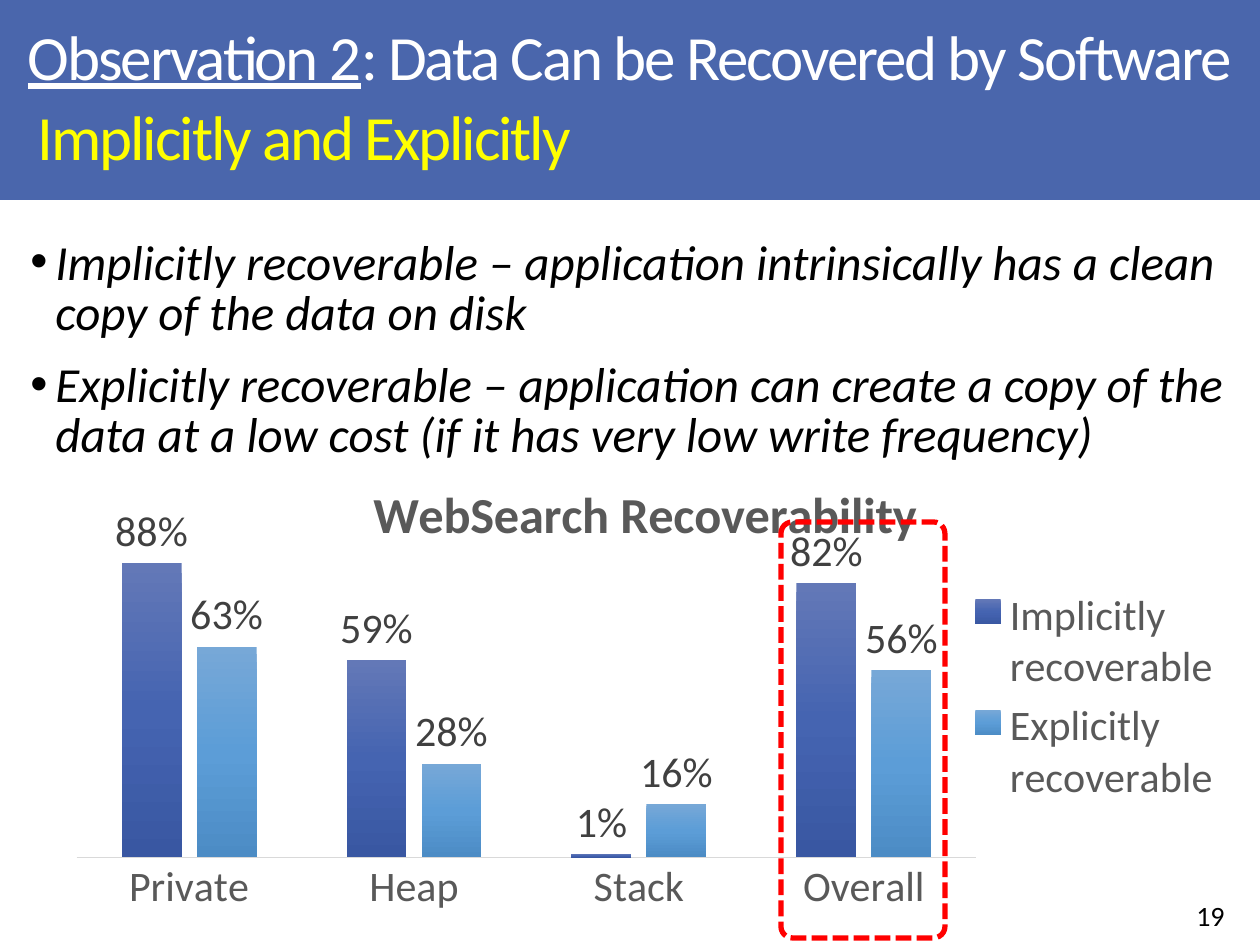
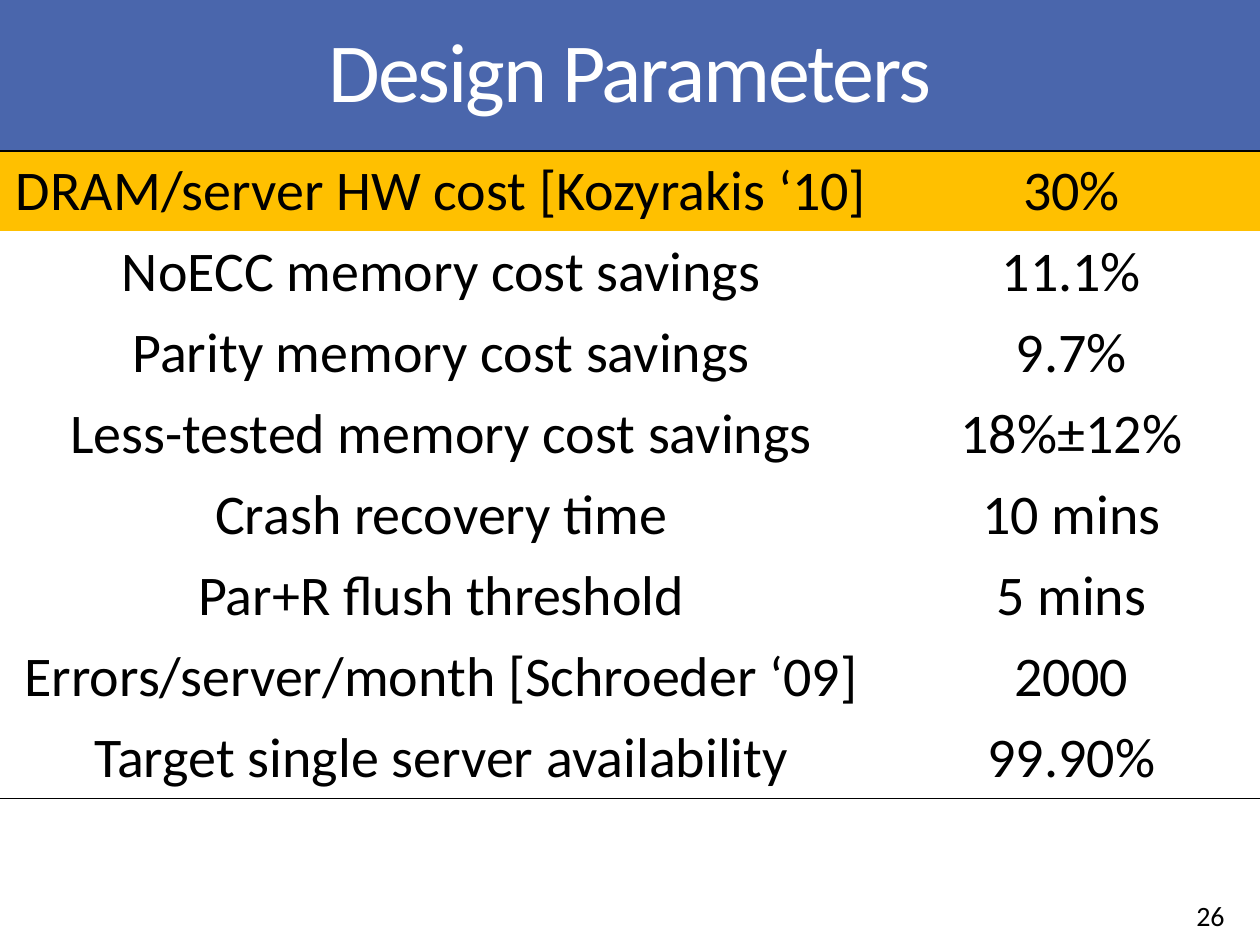
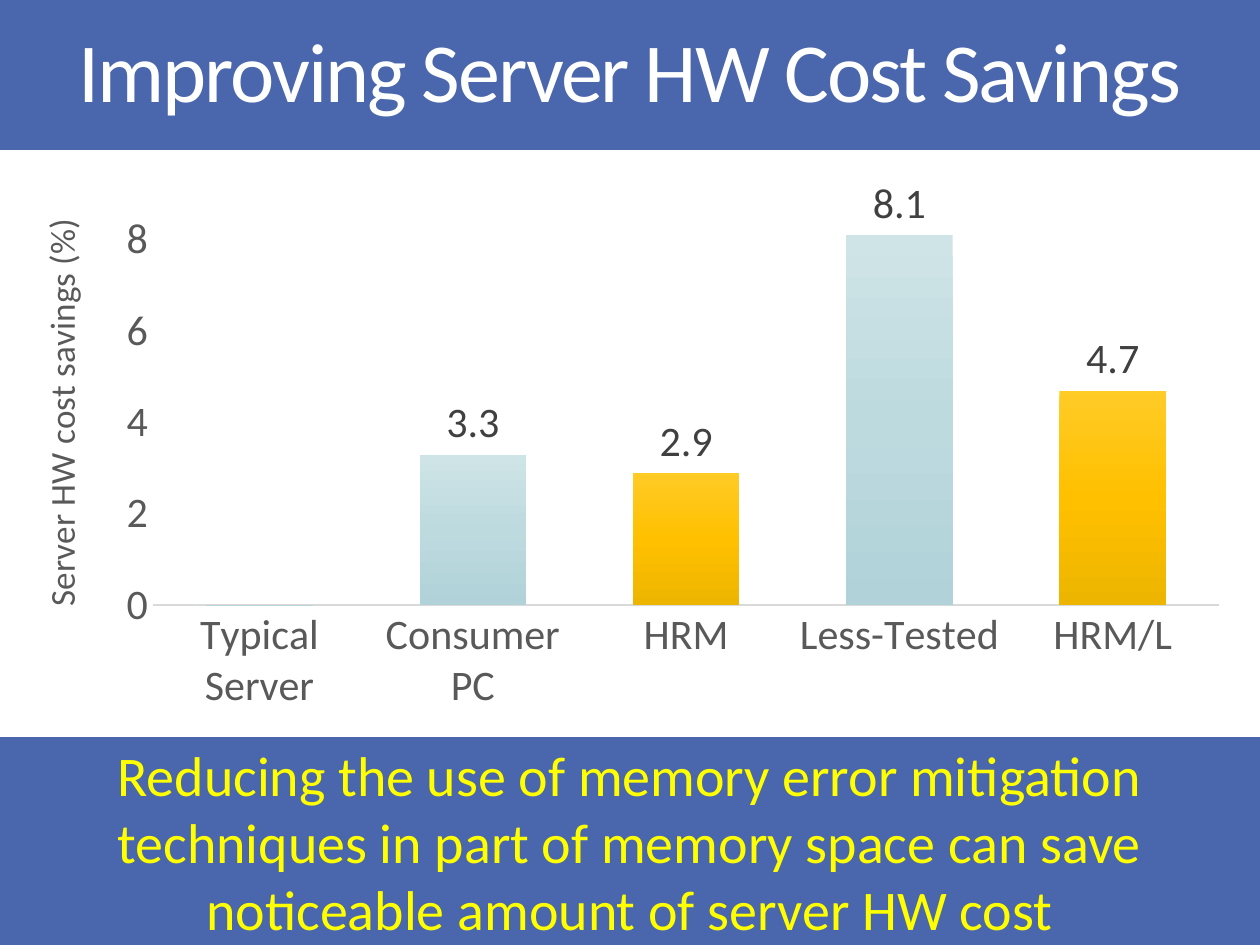
"""Build three slides on data recovery and server hardware cost."""
import lxml.etree
import pptx
import pptx.chart.data
import pptx.dml.color
import pptx.enum.chart
import pptx.enum.dml
import pptx.enum.shapes
import pptx.enum.text
import pptx.oxml.ns
import pptx.util

RGB = pptx.dml.color.RGBColor
SHAPE = pptx.enum.shapes.MSO_SHAPE
ALIGN = pptx.enum.text.PP_ALIGN
ANCHOR = pptx.enum.text.MSO_ANCHOR
CHART = pptx.enum.chart
Pt = pptx.util.Pt
qn = pptx.oxml.ns.qn

BLUE = RGB(0x4A, 0x66, 0xAC)
WHITE = RGB(0xFF, 0xFF, 0xFF)
BLACK = RGB(0, 0, 0)
YELLOW = RGB(0xFF, 0xFF, 0)
AMBER = RGB(0xFF, 0xC0, 0)
RED = RGB(0xFF, 0, 0)
GREY = RGB(0x59, 0x59, 0x59)
DARK = RGB(0x40, 0x40, 0x40)
PALE = RGB(0xD9, 0xD9, 0xD9)
NAVY_FADE = (RGB(0x63, 0x78, 0xB7), RGB(0x45, 0x64, 0xB1), RGB(0x39, 0x57, 0xA2))
SKY_FADE = (RGB(0x77, 0xA8, 0xD7), RGB(0x5C, 0x9D, 0xD7), RGB(0x4C, 0x8C, 0xC5))
TEAL_FADE = (RGB(0xCF, 0xE4, 0xE7), RGB(0xBD, 0xDA, 0xDF), RGB(0xB0, 0xD2, 0xD8))
GOLD_FADE = (RGB(0xFF, 0xCB, 0x25), AMBER, RGB(0xEE, 0xB5, 0))

FONT = "Calibri"
SCALE = 914400 / 126
WIDE, HIGH = 1260, 945
TITLE_HIGH = 150
COLS = (883, 377)
ROW_HIGH = 81
PLAIN = "{2D5ABB26-0587-4C30-8999-92F81FD0307C}"

FACTS = (
    ("DRAM/server HW cost [Kozyrakis ‘10]", "30%"),
    ("NoECC memory cost savings", "11.1%"),
    ("Parity memory cost savings", "9.7%"),
    ("Less-tested memory cost savings", "18%±12%"),
    ("Crash recovery time", "10 mins"),
    ("Par+R flush threshold", "5 mins"),
    ("Errors/server/month [Schroeder ‘09]", "2000"),
    ("Target single server availability", "99.90%"),
)
POINTS = (
    "Implicitly recoverable – application intrinsically has a clean copy of the data on disk",
    "Explicitly recoverable – application can create a copy of the data at a low cost "
    "(if it has very low write frequency)",
)


def px(size):
    return round(size * SCALE)


def area(*box):
    return [px(size) for size in box]


def style(font, size, color, bold=False):
    font.name, font.size, font.bold = FONT, Pt(size), bold
    font.color.rgb = color


def write(para, text, size, color, space=0):
    run = para.add_run()
    run.text = text
    style(run.font, size, color)
    if space:
        run._r.get_or_add_rPr().set("spc", str(space))
    return run


def add_band(slide, top, high, anchor=ANCHOR.MIDDLE, align=ALIGN.CENTER):
    band = slide.shapes.add_shape(SHAPE.RECTANGLE, *area(0, top, WIDE, high))
    band.shadow.inherit = False
    band.fill.solid()
    band.fill.fore_color.rgb = BLUE
    band.line.fill.background()
    band.text_frame.word_wrap = True
    band.text_frame.vertical_anchor = anchor
    para = band.text_frame.paragraphs[0]
    para.alignment = align
    return para


def add_title(slide, text):
    para = add_band(slide, 0, TITLE_HIGH)
    para.line_spacing = 0.9
    write(para, text, 48, WHITE, -120)


def add_head(slide, topic, claim, rest):
    high = 100
    first = add_band(slide, 0, high, ANCHOR.BOTTOM)
    write(first, topic, 36, WHITE, -120).font.underline = True
    write(first, claim, 36, WHITE, -120)
    last = add_band(slide, high, high, ANCHOR.TOP, ALIGN.LEFT)
    last._p.get_or_add_pPr().set("marL", str(px(25)))
    write(last, rest, 36, YELLOW, -120)
    for para in (first, last):
        para.line_spacing = 0.9


def add_text(slide, *box):
    frame = slide.shapes.add_textbox(*area(*box)).text_frame
    frame.word_wrap = True
    return frame


def add_number(slide, number):
    frame = add_text(slide, 954, 890, 283, 50)
    frame.vertical_anchor = ANCHOR.MIDDLE
    para = frame.paragraphs[0]
    para.alignment = ALIGN.RIGHT
    write(para, str(number), 16, BLACK)


def add_points(slide, points):
    frame = add_text(slide, 18, 234, 1226, 240)
    for index, text in enumerate(points):
        para = frame.add_paragraph() if index else frame.paragraphs[0]
        para.line_spacing = 0.85
        para.space_before = Pt(13)
        props = para._p.get_or_add_pPr()
        props.set("marL", str(px(25)))
        props.set("indent", str(px(-25)))
        lxml.etree.SubElement(props, qn("a:buFont"), typeface="Arial")
        lxml.etree.SubElement(props, qn("a:buChar"), char="•")
        write(para, text, 28, BLACK).font.italic = True


def add_frame(slide, *box):
    shape = slide.shapes.add_shape(SHAPE.ROUNDED_RECTANGLE, *area(*box))
    shape.shadow.inherit = False
    shape.adjustments[0] = 0.07
    shape.fill.background()
    shape.line.color.rgb = RED
    shape.line.width = Pt(3)
    shape.line.dash_style = pptx.enum.dml.MSO_LINE.SQUARE_DOT


def add_grid(slide, top, count, fill=None):
    frame = slide.shapes.add_table(
        count, len(COLS), *area(0, top, WIDE, count * ROW_HIGH))
    table = frame.table
    table.first_row = table.horz_banding = False
    next(frame._element.iter(qn("a:tableStyleId"))).text = PLAIN
    for col, wide in zip(table.columns, COLS):
        col.width = px(wide)
    for row in table.rows:
        row.height = px(ROW_HIGH)
    for cell in table.iter_cells():
        if fill:
            cell.fill.solid()
            cell.fill.fore_color.rgb = fill
        else:
            cell.fill.background()
    return table


def rule(cell, side):
    line = lxml.etree.Element(qn("a:" + side), w=str(Pt(1)))
    fill = lxml.etree.SubElement(line, qn("a:solidFill"))
    lxml.etree.SubElement(fill, qn("a:srgbClr"), val=str(BLACK))
    cell._tc.get_or_add_tcPr().insert(0, line)


def add_facts(slide, top, facts):
    table = add_grid(slide, top, len(facts))
    for row, fact in zip(table.rows, facts):
        for cell, text in zip(row.cells, fact):
            para = cell.text_frame.paragraphs[0]
            para.alignment = ALIGN.CENTER
            write(para, text, 32, BLACK)
    for index in range(len(COLS)):
        rule(table.cell(0, index), "lnT")
        rule(table.cell(len(facts) - 1, index), "lnB")


def shade(fill, fade):
    fill.gradient()
    fill.gradient_angle = 270
    stops = next(fill._xPr.iter(qn("a:gsLst")))
    for stop in list(stops):
        stops.remove(stop)
    for place, color in zip((0, 50000, 100000), fade):
        stop = lxml.etree.SubElement(stops, qn("a:gs"), pos=str(place))
        lxml.etree.SubElement(stop, qn("a:srgbClr"), val=str(color))


def place(part, index, *pairs):
    for old in part.findall(qn("c:layout")):
        part.remove(old)
    layout = lxml.etree.Element(qn("c:layout"))
    manual = lxml.etree.SubElement(layout, qn("c:manualLayout"))
    for name, value in pairs:
        lxml.etree.SubElement(manual, qn("c:" + name), val=str(value))
    part.insert(index, layout)


def place_plot(chart, *box):
    plot = next(chart._chartSpace.iter(qn("c:plotArea")))
    place(plot, 0, ("layoutTarget", "inner"), ("xMode", "edge"),
          ("yMode", "edge"), *zip("xywh", box))


def name_axis(axis, text, size, *spot):
    title = axis.axis_title
    frame = title.text_frame
    write(frame.paragraphs[0], text, size, GREY)
    frame.word_wrap = False
    body = next(title._element.iter(qn("a:bodyPr")))
    body.set("rot", "-5400000")
    body.set("vert", "horz")
    place(title._element, 1, ("xMode", "edge"), ("yMode", "edge"),
          *zip("xy", spot))


def add_bars(slide, box, cats, series, form, gap, overlap, top):
    data = pptx.chart.data.CategoryChartData()
    data.categories = cats
    for name, values in series:
        data.add_series(name, values)
    chart = slide.shapes.add_chart(
        CHART.XL_CHART_TYPE.COLUMN_CLUSTERED, *area(*box), data).chart
    style(chart.font, 24, BLACK)
    chart.has_title = chart.has_legend = False
    plot = chart.plots[0]
    plot.vary_by_categories = False
    plot.gap_width, plot.overlap = gap, overlap
    plot.has_data_labels = True
    labels = plot.data_labels
    style(labels.font, 24, DARK)
    labels.show_value = True
    labels.number_format = form
    labels.number_format_is_linked = False
    labels.position = CHART.XL_LABEL_POSITION.OUTSIDE_END
    for axis in (chart.category_axis, chart.value_axis):
        axis.major_tick_mark = CHART.XL_TICK_MARK.NONE
        axis.has_major_gridlines = False
        style(axis.tick_labels.font, 24, GREY)
    line = chart.category_axis.format.line
    line.color.rgb = PALE
    line.width = Pt(1)
    axis = chart.value_axis
    axis.format.line.fill.background()
    axis.minimum_scale, axis.maximum_scale = 0, top
    return chart


def add_recover(slide):
    chart = add_bars(
        slide, (53, 455, 1184, 485), ("Private", "Heap", "Stack", "Overall"),
        (("Implicitly recoverable", (0.88, 0.59, 0.01, 0.82)),
         ("Explicitly recoverable", (0.63, 0.28, 0.16, 0.56))),
        "0%", 150, -25, 1)
    place_plot(chart, 0.02, 0.14, 0.76, 0.69)
    chart.value_axis.visible = False
    for item, fade in zip(chart.series, (NAVY_FADE, SKY_FADE)):
        shade(item.format.fill, fade)
    para = chart.chart_title.text_frame.paragraphs[0]
    write(para, "WebSearch Recoverability", 28.8, GREY).font.bold = True
    chart.has_legend = True
    chart.legend.position = CHART.XL_LEGEND_POSITION.RIGHT
    chart.legend.include_in_layout = False
    style(chart.legend.font, 24, GREY)


def add_savings(slide):
    chart = add_bars(
        slide, (18, 171, 1226, 587),
        ("Typical Server", "Consumer PC", "HRM", "Less-Tested", "HRM/L"),
        (("Series 1", (0, 3.3, 2.9, 8.1, 4.7)),), "0.0;;", 100, -24, 9)
    place_plot(chart, 0.11, 0.04, 0.87, 0.7)
    axis = chart.value_axis
    axis.major_unit = 2
    axis.tick_labels.number_format = "0"
    axis.tick_labels.number_format_is_linked = False
    name_axis(axis, "Server HW cost savings (%)", 20, 0.01, 0.07)
    item = chart.series[0]
    shade(item.format.fill, NAVY_FADE)
    fades = (TEAL_FADE, TEAL_FADE, GOLD_FADE, TEAL_FADE, GOLD_FADE)
    for index, fade in enumerate(fades):
        shade(item.points[index].format.fill, fade)


def main():
    deck = pptx.Presentation()
    deck.slide_width, deck.slide_height = px(WIDE), px(HIGH)
    blank = deck.slide_layouts[6]

    slide = deck.slides.add_slide(blank)
    add_points(slide, POINTS)
    add_number(slide, 19)
    add_head(slide, "Observation 2", ": Data Can be Recovered by Software",
             "Implicitly and Explicitly")
    add_recover(slide)
    add_frame(slide, 781, 522, 164, 416)

    slide = deck.slides.add_slide(blank)
    add_grid(slide, TITLE_HIGH, 1, AMBER)
    add_title(slide, "Design Parameters")
    add_number(slide, 26)
    add_facts(slide, TITLE_HIGH + 1, FACTS)

    slide = deck.slides.add_slide(blank)
    add_title(slide, "Improving Server HW Cost Savings")
    add_savings(slide)
    top = 737
    para = add_band(slide, top, HIGH - top)
    write(para, "Reducing the use of memory error mitigation techniques in part of "
          "memory space can save noticeable amount of server HW cost", 32, YELLOW)

    deck.save("out.pptx")


if __name__ == "__main__":
    main()
